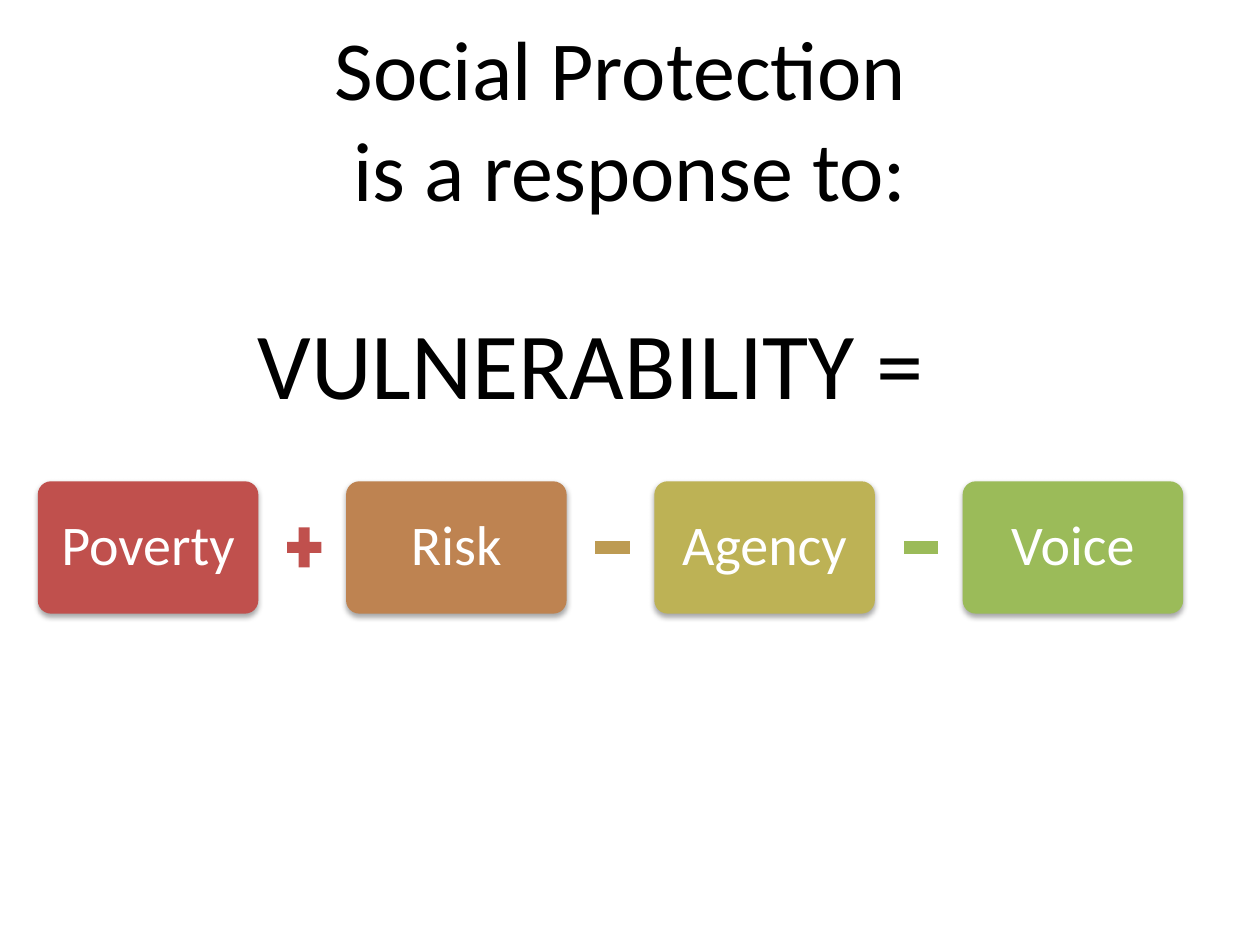
import pptx
import pptx.dml.color
import pptx.enum.shapes
import pptx.enum.text
import pptx.oxml
import pptx.oxml.ns
import pptx.util
from pptx.util import Inches

SHAPES = pptx.enum.shapes.MSO_SHAPE
MIDDLE = pptx.enum.text.MSO_ANCHOR.MIDDLE
FACTORS = [("Poverty", "C0504D"), ("Risk", "BE8351"),
           ("Agency", "BDB255"), ("Voice", "9BBB59")]
OPERATORS = [(SHAPES.MATH_PLUS, "C0504D"), (SHAPES.MATH_MINUS, "BD9B53"),
             (SHAPES.MATH_MINUS, "9BBB59")]


def rgb(color):
    """Turn a hex string into a colour."""
    return pptx.dml.color.RGBColor.from_string(color)


def write_line(paragraph, words, size, color):
    """Add one centred run of Calibri to a paragraph."""
    paragraph.alignment = pptx.enum.text.PP_ALIGN.CENTER
    run = paragraph.add_run()
    run.text = words
    run.font.name = "Calibri"
    run.font.size = pptx.util.Pt(size)
    run.font.color.rgb = rgb(color)


def add_soft_shadow(shape):
    """Give a shape a soft shadow falling straight down."""
    shape.shadow.inherit = False
    effects = shape._element.spPr.find(pptx.oxml.ns.qn("a:effectLst"))
    effects.append(pptx.oxml.parse_xml(
        f'<a:outerShdw {pptx.oxml.ns.nsdecls("a")} blurRad="40000" dist="23000" '
        'dir="5400000" rotWithShape="0"><a:srgbClr val="000000">'
        '<a:alpha val="35000"/></a:srgbClr></a:outerShdw>'))


def add_filled_shape(slide, preset, color, left, top, width, height):
    """Add a flat preset shape without an outline."""
    shape = slide.shapes.add_shape(preset, left, top, width, height)
    shape.shadow.inherit = False
    shape.fill.solid()
    shape.fill.fore_color.rgb = rgb(color)
    shape.line.fill.background()
    return shape


def place_title(slide, left, top, width, height):
    """Place the two-line slide title."""
    title = slide.shapes.title
    title.left, title.top, title.width, title.height = left, top, width, height
    frame = title.text_frame
    frame.vertical_anchor = MIDDLE
    write_line(frame.paragraphs[0], "Social Protection ", 48, "000000")
    write_line(frame.add_paragraph(), "is a response to:", 48, "000000")


def place_vulnerability(slide, left, top, width, height):
    """Place the left-hand side of the equation."""
    vulnerability = slide.shapes.add_textbox(left, top, width, height)
    frame = vulnerability.text_frame
    frame.word_wrap = True
    write_line(frame.paragraphs[0], "VULNERABILITY =", 54, "000000")


def place_factor(slide, name, color, left, top, width, height):
    """Place one rounded factor card with its name."""
    card = add_filled_shape(slide, SHAPES.ROUNDED_RECTANGLE, color,
                            left, top, width, height)
    card.adjustments[0] = 0.1
    add_soft_shadow(card)
    frame = card.text_frame
    frame.word_wrap = True
    frame.vertical_anchor = MIDDLE
    frame.margin_left = frame.margin_right = Inches(0.13)
    frame.margin_top = frame.margin_bottom = Inches(0.13)
    write_line(frame.paragraphs[0], name, 32, "FFFFFF")
    frame.paragraphs[0].line_spacing = 0.9


def place_equation(slide, left, top, width, height):
    """Spread the factors over the row, with an operator after each but the last."""
    card_width = Inches(1.75)
    step = (width - card_width) // (len(FACTORS) - 1)
    for index, (name, color) in enumerate(FACTORS):
        place_factor(slide, name, color, left + index * step, top, card_width, height)
    sign_width, sign_height = Inches(0.37), Inches(0.43)
    sign_top = top + (height - sign_height) // 2
    for index, (sign, color) in enumerate(OPERATORS):
        sign_left = left + index * step + card_width + Inches(0.18)
        add_filled_shape(slide, sign, color, sign_left, sign_top,
                         sign_width, sign_height)


def main():
    """Build and save the slide."""
    deck = pptx.Presentation()
    deck.slide_width, deck.slide_height = Inches(10), Inches(7.5)
    slide = deck.slides.add_slide(deck.slide_layouts.get_by_name("Title Only"))
    place_equation(slide, Inches(0.3), Inches(3.82), Inches(9.09), Inches(1.05))
    place_vulnerability(slide, Inches(1.07), Inches(2.37), Inches(7.24), Inches(1.01))
    place_title(slide, Inches(0.5), Inches(0.07), Inches(9), Inches(1.72))
    deck.save("out.pptx")


if __name__ == "__main__":
    main()
